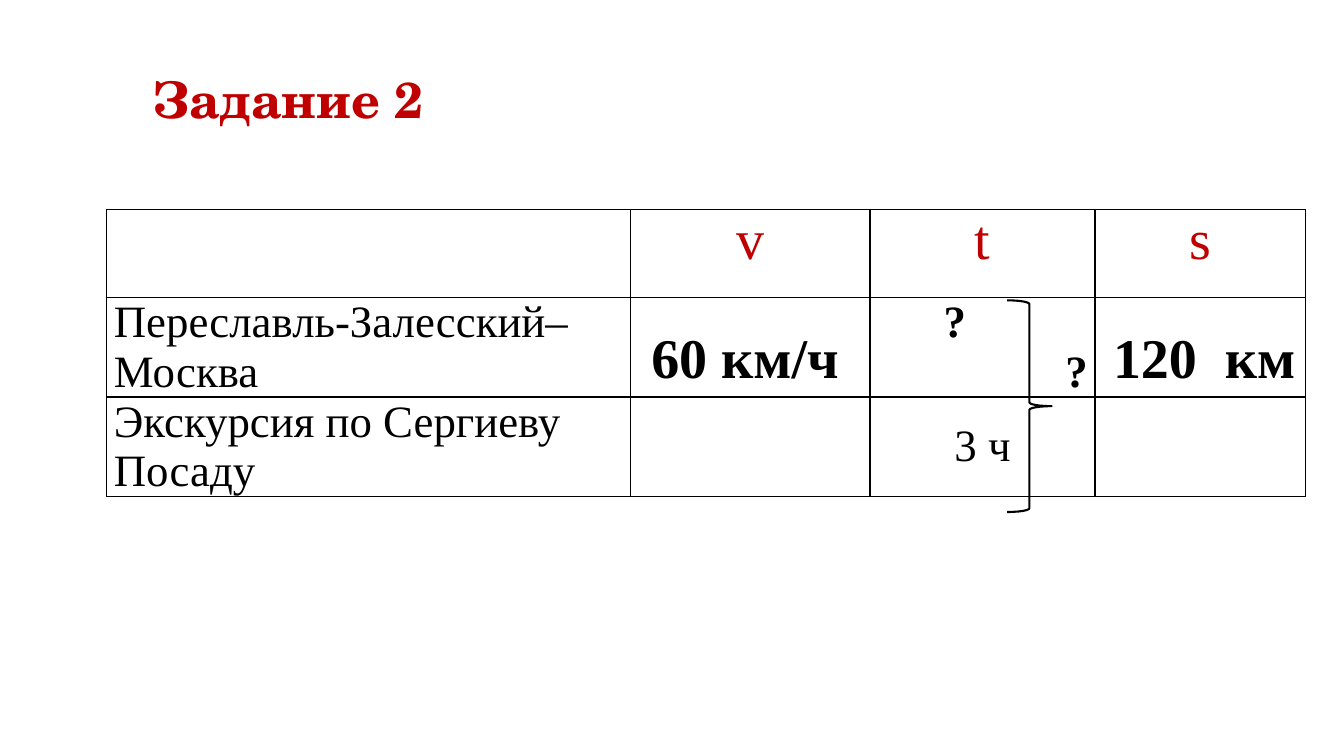
from lxml import etree
from pptx import Presentation
from pptx.dml.color import RGBColor
from pptx.enum.shapes import MSO_SHAPE
from pptx.enum.text import PP_ALIGN
from pptx.oxml.ns import qn
from pptx.util import Inches, Pt

LEFT, CENTER, RIGHT = PP_ALIGN.LEFT, PP_ALIGN.CENTER, PP_ALIGN.RIGHT
BRACE = MSO_SHAPE.RIGHT_BRACE
COLORS = {"red": "C00000", "black": "000000"}
TITLE_FONT, TABLE_FONT = "TeX Gyre Schola", "Times New Roman"
COLUMN_WIDTHS = [5.19, 2.38, 2.23, 2.09]
ROW_HEIGHTS = [0.87, 0.99, 0.99]


def write_text(para, text, size=32, font=TABLE_FONT, color="black", bold=False,
               align=LEFT, line_spacing=None, space_after=0, indent=0):
    para.alignment = align
    para.space_after = Pt(space_after)
    if line_spacing:
        para.line_spacing = line_spacing
    if indent:
        para._p.get_or_add_pPr().set("marL", str(Inches(indent)))
    span = para.add_run()
    span.text = text
    span.font.size = Pt(size)
    span.font.name = font
    span.font.bold = bold
    span.font.color.rgb = RGBColor.from_string(COLORS[color])


def add_title(page, text):
    box = page.shapes.add_textbox(Inches(1.41), Inches(0.63), Inches(4.19), Inches(0.71))
    box.text_frame.word_wrap = True
    write_text(box.text_frame.paragraphs[0], text, size=36, font=TITLE_FONT,
               color="red", bold=True)


def style_cell(cell):
    """Clear the fill, tighten the margins and draw thin black borders."""
    cell.margin_left = cell.margin_right = Inches(0.07)
    cell.margin_top = cell.margin_bottom = 0
    properties = cell._tc.get_or_add_tcPr()
    for side in ("a:lnL", "a:lnR", "a:lnT", "a:lnB"):
        border = etree.SubElement(properties, qn(side), w=str(Pt(1)))
        fill = etree.SubElement(border, qn("a:solidFill"))
        etree.SubElement(fill, qn("a:srgbClr"), val=COLORS["black"])
    cell.fill.background()


def add_motion_table(page):
    frame = page.shapes.add_table(
        len(ROW_HEIGHTS), len(COLUMN_WIDTHS), Inches(1.06), Inches(2.08),
        Inches(sum(COLUMN_WIDTHS)), Inches(sum(ROW_HEIGHTS)))
    table = frame.table
    table.first_row = table.horz_banding = False
    for column, width in zip(table.columns, COLUMN_WIDTHS):
        column.width = Inches(width)
    for row, height in zip(table.rows, ROW_HEIGHTS):
        row.height = Inches(height)
    for cell in table.iter_cells():
        style_cell(cell)
    return table


def fill_motion_table(table):
    def first_para(row, column):
        return table.cell(row, column).text_frame.paragraphs[0]

    for column, symbol in enumerate("vts", start=1):
        write_text(first_para(0, column), symbol, size=40, color="red",
                   align=CENTER, space_after=24)
    for row, label in enumerate(
            ["Переславль-Залесский– Москва", "Экскурсия по Сергиеву Посаду"], start=1):
        write_text(first_para(row, 0), label)
    write_text(first_para(1, 1), "60 км/ч", size=40, bold=True,
               line_spacing=1.5, indent=0.14)
    write_text(first_para(1, 2), "?", bold=True, indent=0.66)
    write_text(table.cell(1, 2).text_frame.add_paragraph(), "?", bold=True, align=RIGHT)
    write_text(first_para(1, 3), "120  км", size=40, bold=True,
               line_spacing=1.5, indent=0.11)
    write_text(first_para(2, 2), "3 ч", align=CENTER, line_spacing=1.5)


def add_time_brace(page):
    brace = page.shapes.add_shape(
        BRACE, Inches(9.99), Inches(2.98), Inches(0.44), Inches(2.1))
    brace.shadow.inherit = False
    brace.fill.background()
    brace.line.color.rgb = RGBColor.from_string(COLORS["black"])
    brace.line.width = Pt(1.5)


def main():
    deck = Presentation()
    deck.slide_width, deck.slide_height = Inches(13.33), Inches(7.5)
    page = deck.slides.add_slide(deck.slide_layouts[6])
    fill_motion_table(add_motion_table(page))
    add_title(page, "Задание 2")
    add_time_brace(page)
    deck.save("out.pptx")


if __name__ == "__main__":
    main()
